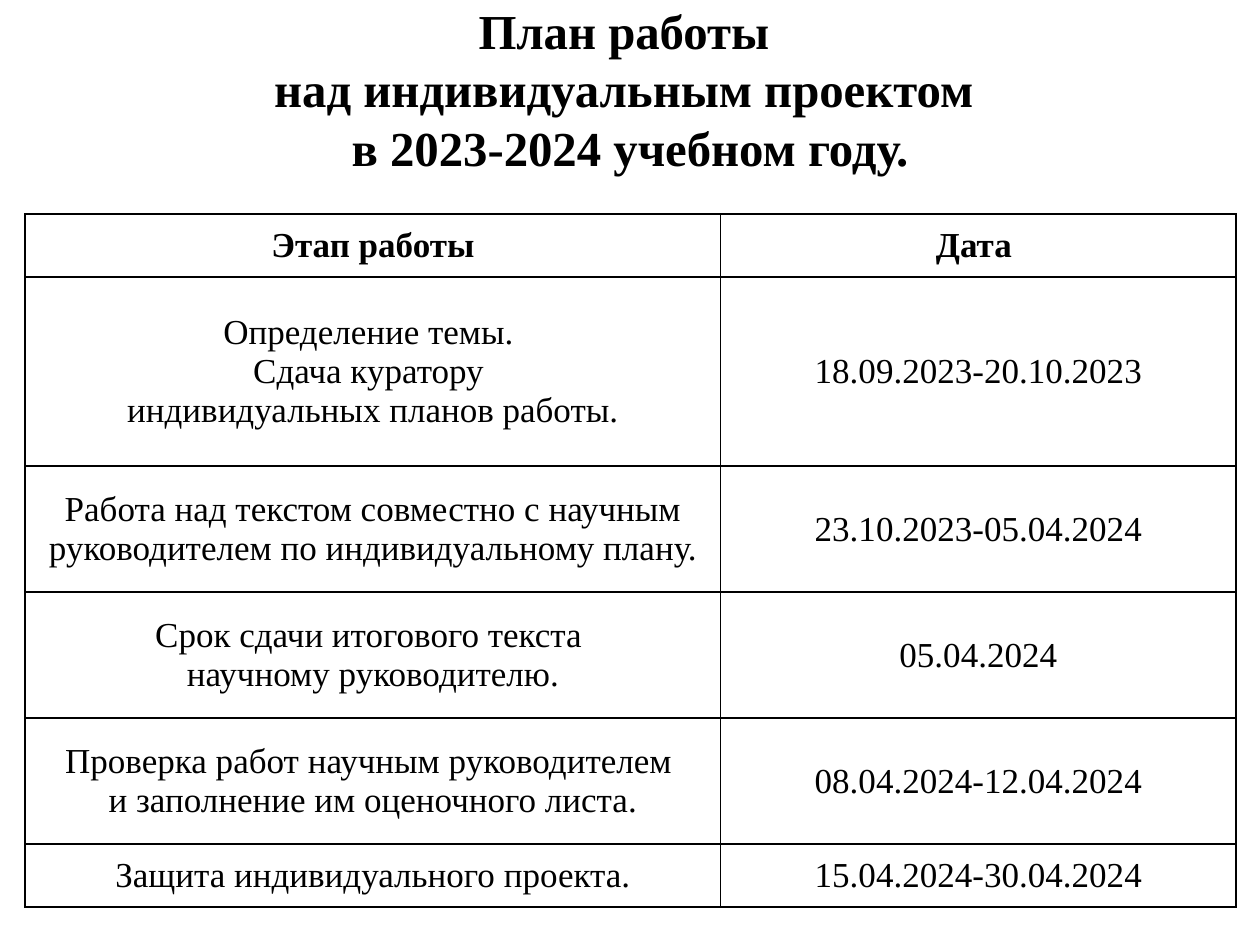
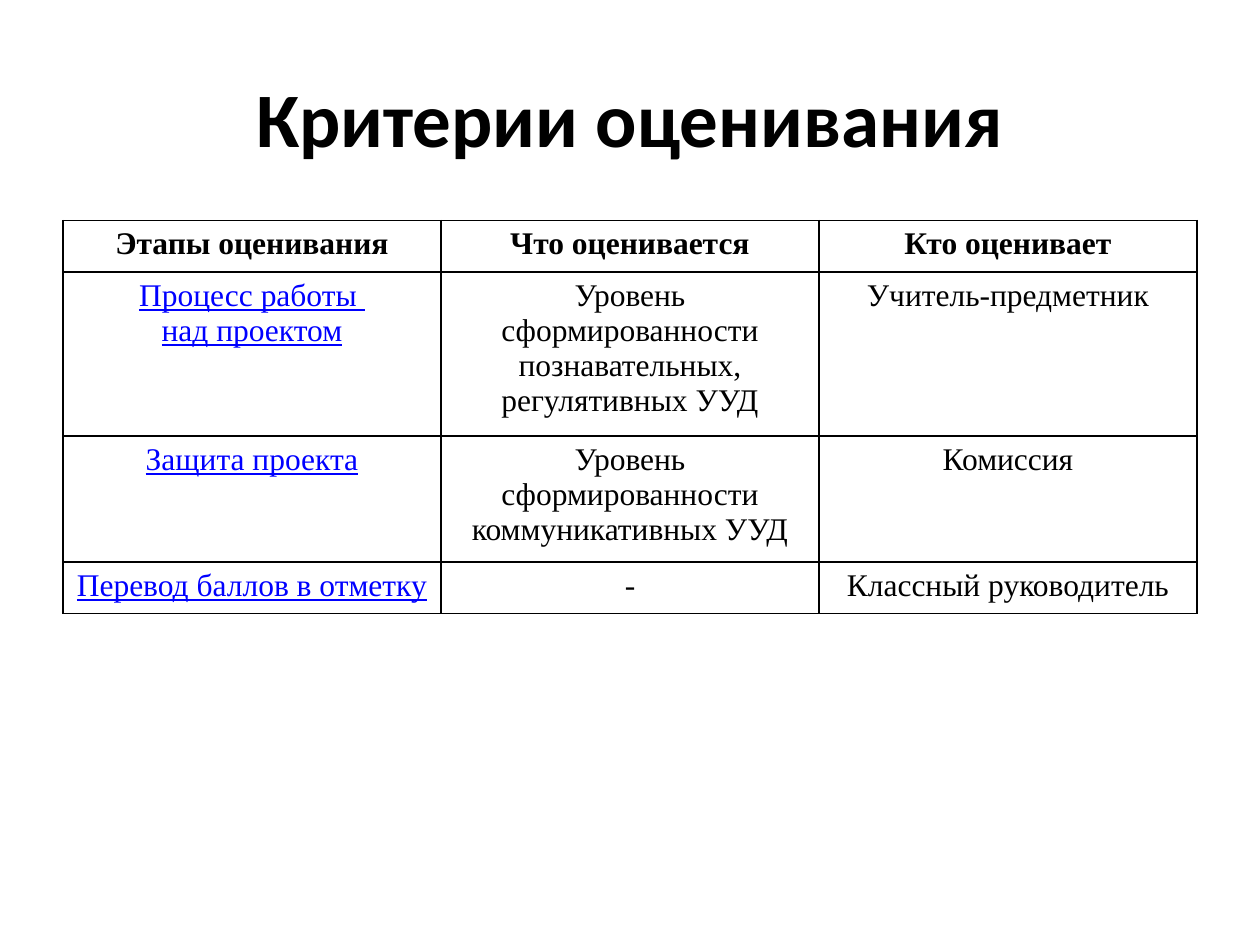
"""Build two slides: the project work plan and the grading criteria."""
from lxml.etree import SubElement
from pptx import Presentation
from pptx.dml.color import RGBColor
from pptx.enum.text import MSO_ANCHOR, PP_ALIGN
from pptx.oxml.ns import qn
from pptx.util import Inches, Pt

BLACK = RGBColor(0, 0, 0)
BLUE = RGBColor(0, 0, 255)
SERIF = "Times New Roman"


def write(frame, text, color=BLACK, space=None, **style):
    frame.text = text
    frame.word_wrap = True
    for para in frame.paragraphs:
        para.alignment = PP_ALIGN.CENTER
        para.line_spacing = space
        for run in para.runs:
            run.font.color.rgb = color
            for key, val in style.items():
                setattr(run.font, key, val)


def edge(cell):
    props = cell._tc.get_or_add_tcPr()
    for side in ("lnL", "lnR", "lnT", "lnB"):
        line = SubElement(props, qn(f"a:{side}"), w=str(Pt(1)))
        fill = SubElement(line, qn("a:solidFill"))
        SubElement(fill, qn("a:srgbClr"), val=str(BLACK))
    cell.fill.background()


PLAN = {
    "title": "План работы \nнад индивидуальным проектом \nв 2023-2024 учебном году.",
    "box": (0, 0, 10, 1.55),
    "foot": 0.2,
    "head": {"name": SERIF, "size": Pt(27.9), "bold": True, "space": Pt(33.4)},
    "at": (0.2, 1.7),
    "cols": [5.52, 4.09],
    "rows": [0.5, 1.5, 1, 1, 1, 0.5],
    "size": Pt(20),
    "links": False,
    "cell": {
        "vertical_anchor": MSO_ANCHOR.MIDDLE,
        "margin_left": Inches(0.07),
        "margin_right": Inches(0.07),
        "margin_top": 0,
        "margin_bottom": 0,
    },
    "data": [
        ["Этап работы", "Дата "],
        ["Определение темы. \nСдача куратору \nиндивидуальных планов работы.",
         "18.09.2023-20.10.2023"],
        ["Работа над текстом совместно с научным руководителем по индивидуальному плану.",
         "23.10.2023-05.04.2024"],
        ["Срок сдачи итогового текста \nнаучному руководителю.", "05.04.2024"],
        ["Проверка работ научным руководителем \nи заполнение им оценочного листа.",
         "08.04.2024-12.04.2024"],
        ["Защита индивидуального проекта.", "15.04.2024-30.04.2024"],
    ],
}
MARKS = {
    "title": "Критерии оценивания",
    "box": (0.5, 0.3, 9, 1.25),
    "foot": 0.05,
    "head": {"name": "Calibri", "size": Pt(44), "bold": True},
    "at": (0.5, 1.75),
    "cols": [3, 3, 3],
    "rows": [0.41, 1.2, 0.93, 0.41],
    "size": Pt(18),
    "links": True,
    "cell": {"vertical_anchor": MSO_ANCHOR.TOP},
    "data": [
        ["Этапы оценивания", "Что оценивается", "Кто оценивает"],
        ["Процесс работы \nнад проектом",
         "Уровень сформированности познавательных, регулятивных УУД",
         "Учитель-предметник"],
        ["Защита проекта", "Уровень сформированности коммуникативных УУД", "Комиссия"],
        ["Перевод баллов в отметку", "-", "Классный руководитель"],
    ],
}

deck = Presentation()
deck.slide_width, deck.slide_height = Inches(10), Inches(7.5)

for page in (PLAN, MARKS):
    slide = deck.slides.add_slide(deck.slide_layouts[6])
    frame = slide.shapes.add_textbox(*map(Inches, page["box"])).text_frame
    frame.vertical_anchor = MSO_ANCHOR.MIDDLE
    frame.margin_bottom = Inches(page["foot"])
    write(frame, page["title"], **page["head"])

    cols, rows = page["cols"], page["rows"]
    area = map(Inches, (*page["at"], sum(cols), sum(rows)))
    table = slide.shapes.add_table(len(rows), len(cols), *area).table
    table.first_row = table.horz_banding = False
    for col, width in zip(table.columns, cols):
        col.width = Inches(width)
    for row, height in zip(table.rows, rows):
        row.height = Inches(height)

    for r, texts in enumerate(page["data"]):
        for c, text in enumerate(texts):
            cell = table.cell(r, c)
            link = page["links"] and r > 0 and c == 0
            write(cell.text_frame, text, BLUE if link else BLACK,
                  name=SERIF, size=page["size"], bold=r == 0, underline=link)
            for key, val in page["cell"].items():
                setattr(cell, key, val)
            edge(cell)

deck.save("out.pptx")
